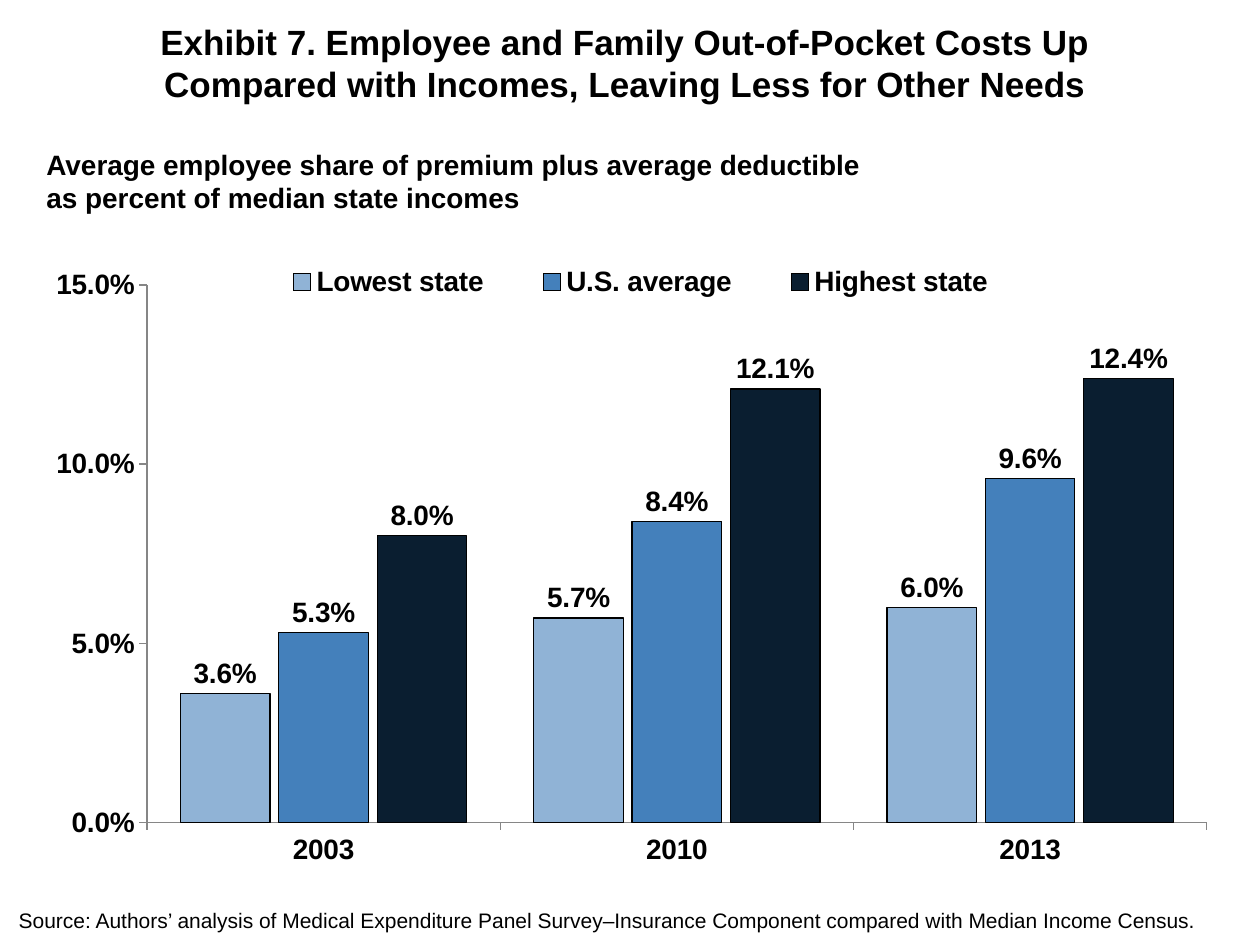
from lxml.etree import SubElement
from pptx import Presentation
from pptx.chart.data import CategoryChartData
from pptx.dml.color import RGBColor
from pptx.enum.chart import XL_CHART_TYPE as ChartType
from pptx.enum.chart import XL_LABEL_POSITION as LabelPosition
from pptx.enum.chart import XL_LEGEND_POSITION as LegendPosition
from pptx.enum.chart import XL_TICK_MARK as TickMark
from pptx.enum.text import MSO_ANCHOR as Anchor
from pptx.enum.text import PP_ALIGN as Align
from pptx.oxml.ns import qn
from pptx.util import Inches, Pt

BLACK = RGBColor(0x00, 0x00, 0x00)
AXIS_GRAY = RGBColor(0x86, 0x86, 0x86)
LIGHT_BLUE = RGBColor(0x90, 0xB3, 0xD6)
MID_BLUE = RGBColor(0x44, 0x80, 0xBB)
NAVY = RGBColor(0x0A, 0x1E, 0x30)
FONT = "Arial"
PERCENT = "0.0%"

presentation = Presentation()
presentation.slide_width = Inches(10)
presentation.slide_height = Inches(7.5)
slide = presentation.slides.add_slide(presentation.slide_layouts[6])


def add_text(box, lines, size, bold, align, anchor):
    frame = slide.shapes.add_textbox(*map(Inches, box)).text_frame
    frame.word_wrap = True
    frame.vertical_anchor = anchor
    paragraph = frame.paragraphs[0]
    paragraph.alignment = align
    for index, line in enumerate(lines):
        if index:
            paragraph.add_line_break()
        run = paragraph.add_run()
        run.text = line
        run.font.name = FONT
        run.font.size = Pt(size)
        run.font.bold = bold
        run.font.color.rgb = BLACK


def set_layout(parent, position, settings):
    for old in parent.findall(qn("c:layout")):
        parent.remove(old)
    layout = SubElement(parent, qn("c:layout"))
    manual = SubElement(layout, qn("c:manualLayout"))
    for tag, value in settings:
        SubElement(manual, qn(f"c:{tag}")).set("val", str(value))
    parent.insert(position, layout)


add_text((0.05, 7.15, 9.78, 0.3),
         ["Source: Authors’ analysis of Medical Expenditure Panel Survey–Insurance Component "
          "compared with Median Income Census."],
         12, False, Align.LEFT, Anchor.TOP)

chart_data = CategoryChartData(number_format=PERCENT)
chart_data.categories = ["2003", "2010", "2013"]
chart_data.add_series("Lowest state", (0.036, 0.057, 0.06))
chart_data.add_series("U.S. average", (0.053, 0.084, 0.096))
chart_data.add_series("Highest state", (0.08, 0.121, 0.124))
chart = slide.shapes.add_chart(
    ChartType.COLUMN_CLUSTERED, *map(Inches, (0.21, 1.73, 9.56, 5.33)), chart_data
).chart
chart.has_title = False
chart.font.name = FONT
chart.font.size = Pt(16)
chart.font.bold = True
chart.font.color.rgb = BLACK

plot = chart.plots[0]
plot.gap_width = 75
plot.overlap = -10
plot.vary_by_categories = False
for series, color in zip(plot.series, (LIGHT_BLUE, MID_BLUE, NAVY)):
    series.format.fill.solid()
    series.format.fill.fore_color.rgb = color
    series.format.line.color.rgb = BLACK
    series.format.line.width = Pt(0.75)
    labels = series.data_labels
    labels.show_value = True
    labels.position = LabelPosition.OUTSIDE_END
    labels.number_format = PERCENT
    labels.number_format_is_linked = False
    labels.font.bold = True

value_axis = chart.value_axis
value_axis.minimum_scale = 0
value_axis.maximum_scale = 0.15
value_axis.major_unit = 0.05
value_axis.has_major_gridlines = False
value_axis.tick_labels.number_format = PERCENT
value_axis.tick_labels.number_format_is_linked = False
for axis in (chart.category_axis, value_axis):
    axis.major_tick_mark = TickMark.OUTSIDE
    axis.minor_tick_mark = TickMark.NONE
    axis.tick_labels.font.bold = True
    axis.format.line.color.rgb = AXIS_GRAY
    axis.format.line.width = Pt(0.75)

chart.has_legend = True
legend = chart.legend
legend.position = LegendPosition.TOP
legend.include_in_layout = True
legend.font.bold = True

plot_area = chart.element.find(".//" + qn("c:plotArea"))
legend_element = chart.element.find(".//" + qn("c:legend"))
edges = [("xMode", "edge"), ("yMode", "edge")]
set_layout(plot_area, 0, [("layoutTarget", "inner"), *edges,
                          ("x", 0.1), ("y", 0.1), ("w", 0.88), ("h", 0.8)])
set_layout(legend_element, 1, [*edges, ("x", 0.18), ("y", 0.06), ("w", 0.66), ("h", 0.07)])

add_text((0, 0.1, 10, 0.8),
         ["Exhibit 7. Employee and Family Out-of-Pocket Costs Up ",
          "Compared with Incomes, Leaving Less for Other Needs "],
         20, True, Align.CENTER, Anchor.MIDDLE)
add_text((0.27, 1.12, 7.17, 0.64),
         ["Average employee share of premium plus average deductible ",
          "as percent of median state incomes"],
         16, True, Align.LEFT, Anchor.TOP)

presentation.save("out.pptx")
